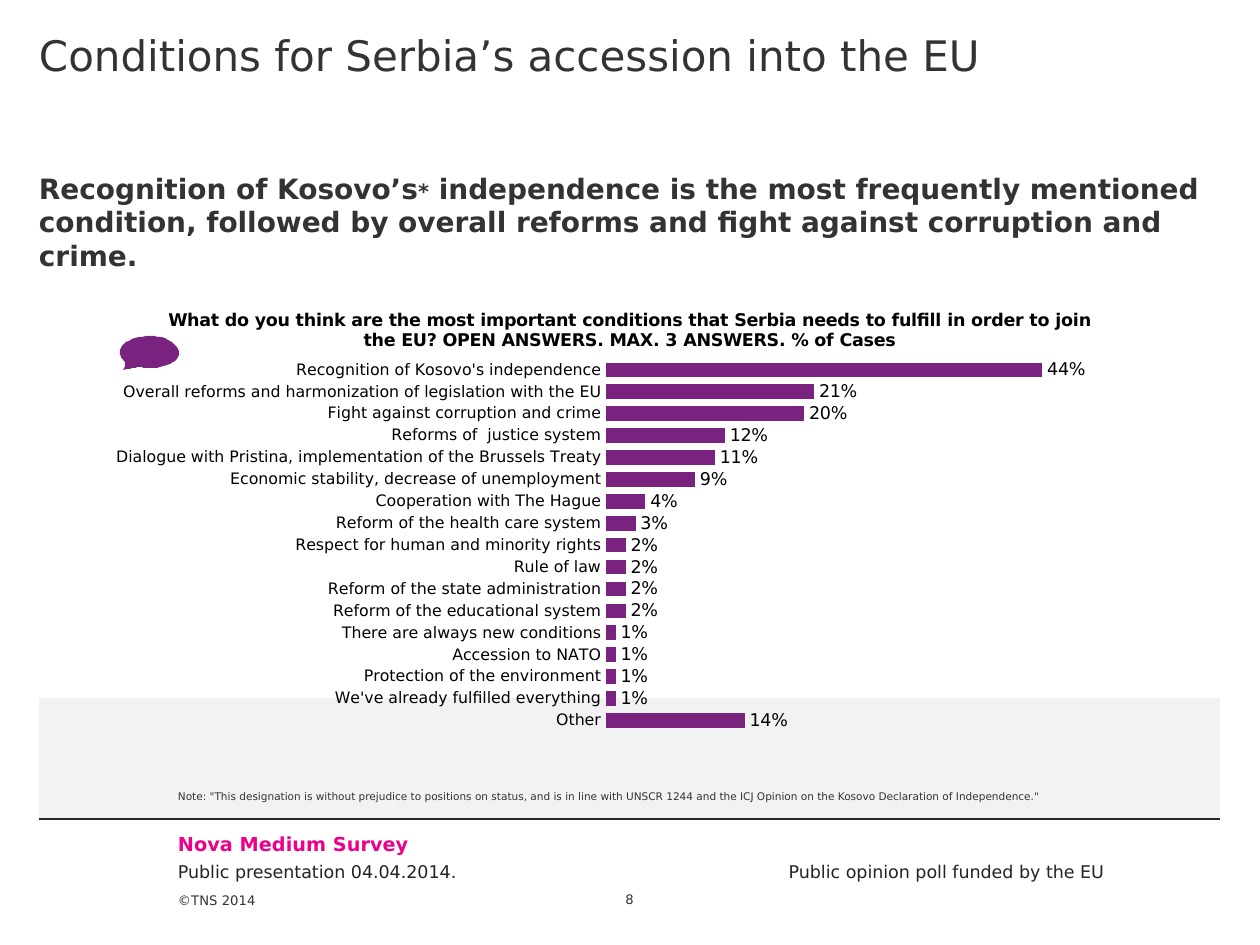
from dataclasses import dataclass
from typing import NamedTuple

import pptx
import pptx.chart.data
import pptx.enum.chart
import pptx.enum.shapes
import pptx.oxml.ns
import pptx.oxml.xmlchemy
import pptx.util
from pptx.dml.color import RGBColor
from pptx.enum.text import MSO_ANCHOR, MSO_AUTO_SIZE, PP_ALIGN

EMU_PER_PX = 914400 / 126


@dataclass(frozen=True)
class Theme:
    font: str = "DejaVu Sans"
    text: str = "333333"
    footer: str = "232323"
    rule: str = "262626"
    band: str = "F2F2F2"
    accent: str = "7A2280"
    brand: str = "EC008C"
    black: str = "000000"
    title_size: float = 24
    message_size: float = 16
    asterisk_size: float = 12
    brand_size: float = 11
    label_size: float = 10
    category_size: float = 9
    small_size: float = 7.5
    note_size: float = 6


THEME = Theme()


class Box(NamedTuple):
    left: int
    top: int
    width: int
    height: int


class Run(NamedTuple):
    text: str
    size: float
    color: str = THEME.text
    bold: bool = False


@dataclass(frozen=True)
class TextBlock:
    box: Box
    runs: list[Run]
    align: PP_ALIGN = PP_ALIGN.LEFT
    anchor: MSO_ANCHOR = MSO_ANCHOR.TOP
    inset_top: int = 0
    inset_bottom: int = 0


TITLE = TextBlock(Box(39, 0, 1181, 142), inset_top=29, runs=[
    Run("Conditions for Serbia’s accession into the EU", THEME.title_size)])
MESSAGE = TextBlock(Box(39, 142, 1181, 105), inset_top=29, runs=[
    Run("Recognition of Kosovo’s", THEME.message_size, bold=True),
    Run("*", THEME.asterisk_size, bold=True),
    Run(" independence is the most frequently mentioned condition, followed by overall "
        "reforms and fight against corruption and crime.", THEME.message_size, bold=True)])
NOTE = TextBlock(Box(178, 767, 1042, 51), anchor=MSO_ANCHOR.BOTTOM, inset_bottom=15, runs=[
    Run('Note: "This designation is without prejudice to positions on status, and is in line '
        'with UNSCR 1244 and the ICJ Opinion on the Kosovo Declaration of Independence."',
        THEME.note_size)])
FOOTER = [
    TextBlock(Box(178, 832, 417, 24),
              [Run("Nova Medium Survey", THEME.brand_size, THEME.brand, True)]),
    TextBlock(Box(178, 861, 428, 22),
              [Run("Public presentation 04.04.2014.", THEME.label_size, THEME.footer)]),
    TextBlock(Box(675, 861, 429, 22), align=PP_ALIGN.RIGHT, runs=[
        Run("Public opinion poll funded by the EU", THEME.label_size, THEME.footer)]),
    TextBlock(Box(178, 872, 105, 73), [Run("©TNS 2014", THEME.small_size)],
              anchor=MSO_ANCHOR.BOTTOM, inset_bottom=37),
    TextBlock(Box(595, 872, 69, 35), [Run("8", THEME.small_size)],
              align=PP_ALIGN.CENTER, anchor=MSO_ANCHOR.BOTTOM),
]

QUESTION = ("What do you think are the most important conditions that Serbia needs to fulfill "
            "in order to join the EU? OPEN ANSWERS. MAX. 3 ANSWERS. % of Cases")
ANSWERS = {
    "Recognition of Kosovo's independence": 44,
    "Overall reforms and harmonization of legislation with the EU": 21,
    "Fight against corruption and crime": 20, "Reforms of  justice system": 12,
    "Dialogue with Pristina, implementation of the Brussels Treaty": 11,
    "Economic stability, decrease of unemployment": 9, "Cooperation with The Hague": 4,
    "Reform of the health care system": 3, "Respect for human and minority rights": 2,
    "Rule of law": 2, "Reform of the state administration": 2,
    "Reform of the educational system": 2, "There are always new conditions": 1,
    "Accession to NATO": 1, "Protection of the environment": 1,
    "We've already fulfilled everything": 1, "Other": 14,
}
PERCENT = r"0\%"
PLOT_LAYOUT = {"layoutTarget": "inner", "xMode": "edge", "yMode": "edge",
               "x": 0.48, "y": 0.15, "w": 0.42, "h": 0.81}

# Speech bubble: each curve has two control points and an end point
BUBBLE_START = (150, 336)
BUBBLE_CURVES = [
    ((134, 336), (120, 343), (120, 352)), ((120, 355), (121, 358), (123, 360)),
    ((128, 364), (123, 370), (123, 370)), ((139, 367), (139, 367), (139, 367)),
    ((141, 367), (145, 368), (149, 368)), ((165, 368), (179, 362), (179, 353)),
    ((179, 344), (166, 336), (150, 336)),
]


def px(*lengths: float) -> list[int]:
    return [round(length * EMU_PER_PX) for length in lengths]


def format_font(font, *, size: float, color: str = THEME.black, bold: bool = False) -> None:
    font.name, font.size, font.bold = THEME.font, pptx.util.Pt(size), bold
    font.color.rgb = RGBColor.from_string(color)


def add_text(paragraph, text: str, **font_format) -> None:
    run = paragraph.add_run()
    run.text = text
    format_font(run.font, **font_format)


def fill_block(shape, block: TextBlock) -> None:
    shape.left, shape.top, shape.width, shape.height = px(*block.box)
    frame = shape.text_frame
    frame.word_wrap, frame.auto_size = True, MSO_AUTO_SIZE.NONE
    frame.vertical_anchor = block.anchor
    frame.margin_left = frame.margin_right = 0
    frame.margin_top, frame.margin_bottom = px(block.inset_top, block.inset_bottom)
    paragraph = frame.paragraphs[0]
    paragraph.alignment = block.align
    for run in block.runs:
        add_text(paragraph, run.text, size=run.size, color=run.color, bold=run.bold)


def fill_solid(fill, color: str) -> None:
    fill.solid()
    fill.fore_color.rgb = RGBColor.from_string(color)


def paint(shape, color: str) -> None:
    shape.shadow.inherit = False
    fill_solid(shape.fill, color)
    shape.line.fill.background()


def add_rule(slide, left: int, right: int, y: int) -> None:
    rule = slide.shapes.add_connector(
        pptx.enum.shapes.MSO_CONNECTOR.STRAIGHT, *px(left, y, right, y))
    rule.line.color.rgb = RGBColor.from_string(THEME.rule)
    rule.line.width = pptx.util.Pt(0.75)
    rule.element.spPr.append(pptx.oxml.xmlchemy.OxmlElement("a:effectLst"))


def add_bubble(slide, steps: int = 12) -> None:
    start, points = BUBBLE_START, []
    for curve in BUBBLE_CURVES:
        for t in (step / steps for step in range(1, steps + 1)):
            weights = ((1 - t) ** 3, 3 * (1 - t) ** 2 * t, 3 * (1 - t) * t ** 2, t ** 3)
            points.append([sum(weight * value for weight, value in zip(weights, values))
                           for values in zip(start, *curve)])
        start = curve[-1]
    builder = slide.shapes.build_freeform(*BUBBLE_START, scale=EMU_PER_PX)
    builder.add_line_segments(points, close=True)
    paint(builder.convert_to_shape(), THEME.accent)


def set_plot_layout(chart) -> None:
    plot_area = chart.element.find(".//" + pptx.oxml.ns.qn("c:plotArea"))
    for old_layout in plot_area.findall(pptx.oxml.ns.qn("c:layout")):
        plot_area.remove(old_layout)
    layout, manual = map(pptx.oxml.xmlchemy.OxmlElement, ("c:layout", "c:manualLayout"))
    for name, value in PLOT_LAYOUT.items():
        setting = pptx.oxml.xmlchemy.OxmlElement(f"c:{name}")
        setting.set("val", str(value))
        manual.append(setting)
    layout.append(manual)
    plot_area.insert(0, layout)


def add_answer_chart(slide, box: Box) -> None:
    data = pptx.chart.data.CategoryChartData(number_format=PERCENT)
    data.categories = list(ANSWERS)
    data.add_series("Series 1", list(ANSWERS.values()))
    kind = pptx.enum.chart.XL_CHART_TYPE.BAR_CLUSTERED
    chart = slide.shapes.add_chart(kind, *px(*box), data).chart
    format_font(chart.font, size=THEME.label_size)
    chart.has_legend = False
    title = chart.chart_title.text_frame.paragraphs[0]
    add_text(title, QUESTION, size=THEME.label_size, bold=True)
    set_plot_layout(chart)
    # Axes
    categories, values = chart.category_axis, chart.value_axis
    categories.reverse_order = True
    categories.major_tick_mark = pptx.enum.chart.XL_TICK_MARK.NONE
    categories.format.line.fill.background()
    format_font(categories.tick_labels.font, size=THEME.category_size)
    values.minimum_scale, values.maximum_scale = 0, 50
    values.has_major_gridlines = values.visible = False
    # Bars and labels
    plot = chart.plots[0]
    plot.gap_width, plot.vary_by_categories, plot.has_data_labels = 50, False, True
    fill_solid(plot.series[0].format.fill, THEME.accent)
    labels = plot.data_labels
    labels.show_value = True
    labels.number_format, labels.number_format_is_linked = PERCENT, False
    labels.position = pptx.enum.chart.XL_LABEL_POSITION.OUTSIDE_END
    format_font(labels.font, size=THEME.label_size)


presentation = pptx.Presentation()
presentation.slide_width, presentation.slide_height = px(1260, 945)
slide = presentation.slides.add_slide(presentation.slide_layouts[5])
# Footer band and rule
rectangle = pptx.enum.shapes.MSO_SHAPE.RECTANGLE
paint(slide.shapes.add_shape(rectangle, *px(39, 698, 1181, 121)), THEME.band)
add_rule(slide, 39, 1220, 819)
# Title, chart, texts and speech bubble
fill_block(slide.shapes.title, TITLE)
add_answer_chart(slide, Box(39, 290, 1181, 460))
for block in [MESSAGE, NOTE, *FOOTER]:
    fill_block(slide.shapes.add_textbox(*px(*block.box)), block)
add_bubble(slide)
presentation.save("out.pptx")
